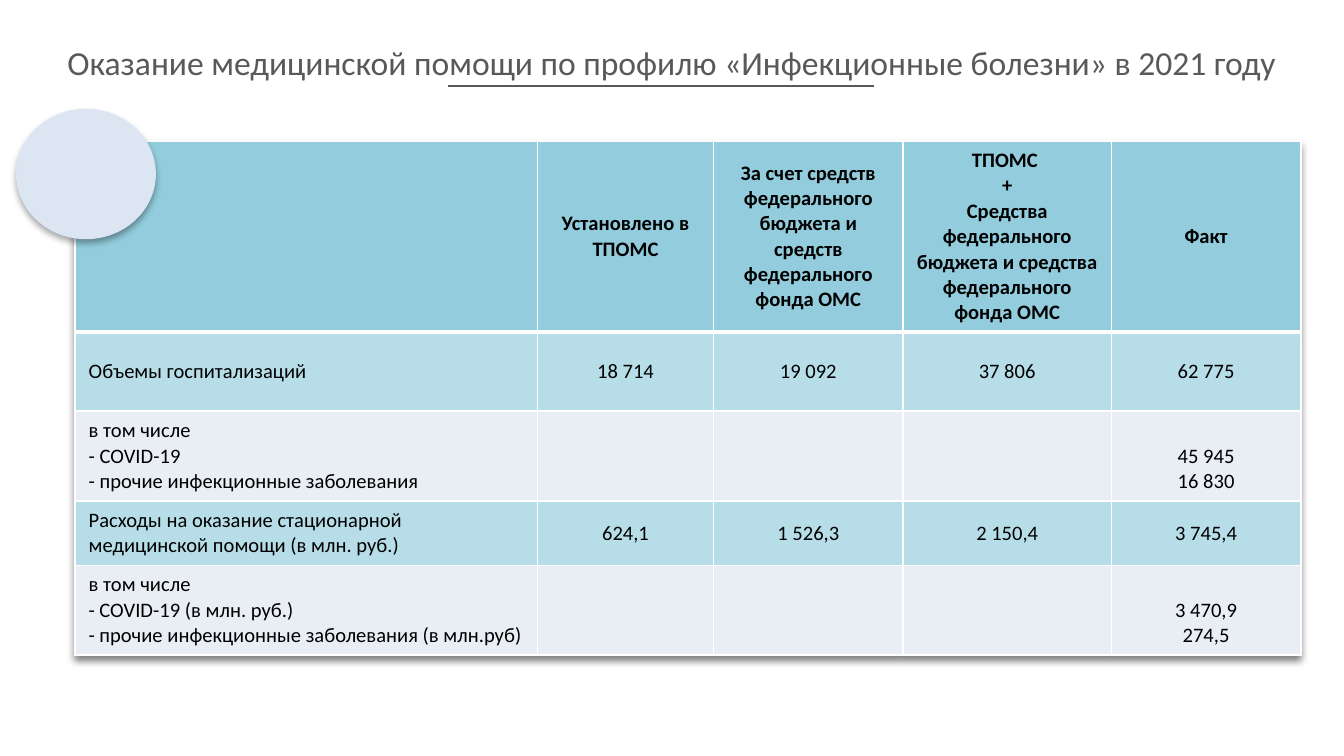
from dataclasses import dataclass

from lxml import etree
from pptx import Presentation
from pptx.dml.color import RGBColor
from pptx.enum.shapes import MSO_CONNECTOR, MSO_SHAPE
from pptx.enum.text import MSO_ANCHOR, PP_ALIGN
from pptx.oxml.ns import qn
from pptx.util import Inches, Pt

LINE = MSO_CONNECTOR.STRAIGHT
OVAL = MSO_SHAPE.OVAL
MIDDLE = MSO_ANCHOR.MIDDLE
BOTTOM = MSO_ANCHOR.BOTTOM
LEFT = PP_ALIGN.LEFT
CENTER = PP_ALIGN.CENTER

FONT = "Calibri"
BLACK = RGBColor(0x00, 0x00, 0x00)
WHITE = RGBColor(0xFF, 0xFF, 0xFF)
GREY = RGBColor(0x59, 0x59, 0x59)
TEAL = RGBColor(0x93, 0xCD, 0xDD)
AQUA = RGBColor(0xB7, 0xDE, 0xE8)
PALE = RGBColor(0xE9, 0xED, 0xF4)
CLOUD = RGBColor(0xDC, 0xE6, 0xF2)

WIDE = 10
WIDTHS = (3.44, 1.31, 1.41, 1.55, 1.41)


@dataclass(frozen=True)
class Row:
    height: float
    fill: RGBColor
    texts: tuple[str, ...]
    bold: bool = False
    top: int = 1
    base: int = 1
    dashes: bool = False
    anchor: MSO_ANCHOR = MIDDLE


ROWS = (
    Row(1.41, TEAL, (
        "",
        "Установлено в ТПОМС",
        "За счет средств федерального бюджета и средств федерального фонда ОМС",
        "ТПОМС \n+\nСредства федерального бюджета и средства федерального фонда ОМС",
        "Факт",
    ), bold=True, base=3),
    Row(0.59, AQUA, ("Объемы госпитализаций", "18 714", "19 092", "37 806", "62 775"), top=3),
    Row(0.66, PALE, (
        "в том числе\n- COVID-19\n- прочие инфекционные заболевания",
        "", "", "", "45 945\n16 830",
    ), anchor=BOTTOM),
    Row(0.48, AQUA, (
        "Расходы на оказание стационарной медицинской помощи (в млн. руб.)",
        "624,1", "1 526,3", "2 150,4", "3 745,4",
    )),
    Row(0.66, PALE, (
        "в том числе\nCOVID-19 (в млн. руб.)\nпрочие инфекционные заболевания (в млн.руб)",
        "", "", "", "3 470,9\n274,5",
    ), dashes=True, anchor=BOTTOM),
)


def style(para, size: float, color: RGBColor, bold: bool = False) -> None:
    for run in para.runs:
        font = run.font
        font.name = FONT
        font.size = Pt(size)
        font.bold = bold
        font.color.rgb = color


def shade(props, alpha: int, blur: float, dist: float) -> None:
    for old in props.findall(qn("a:effectLst")):
        props.remove(old)
    effect = etree.Element(qn("a:effectLst"))
    shadow = etree.SubElement(
        effect, qn("a:outerShdw"), blurRad=str(Pt(blur)), dist=str(Pt(dist)),
        dir="5400000", algn="t", rotWithShape="0",
    )
    color = etree.SubElement(shadow, qn("a:srgbClr"), val=str(BLACK))
    etree.SubElement(color, qn("a:alpha"), val=str(alpha * 1000))
    style_id = props.find(qn("a:tableStyleId"))
    if style_id is None:
        props.append(effect)
    else:
        style_id.addprevious(effect)


def border(cell, row: Row) -> None:
    props = cell._tc.get_or_add_tcPr()
    sides = (("L", 1), ("R", 1), ("T", row.top), ("B", row.base))
    for spot, (side, width) in enumerate(sides):
        line = etree.Element(qn(f"a:ln{side}"), w=str(Pt(width)))
        fill = etree.SubElement(line, qn("a:solidFill"))
        etree.SubElement(fill, qn("a:srgbClr"), val=str(WHITE))
        props.insert(spot, line)


def dash(para) -> None:
    props = para._p.get_or_add_pPr()
    props.set("marL", str(Inches(0.08)))
    props.set("indent", str(-Inches(0.08)))
    etree.SubElement(props, qn("a:buFont"), typeface=FONT)
    etree.SubElement(props, qn("a:buChar"), char="-")


def fill_cell(cell, row: Row, col: int) -> None:
    cell.fill.solid()
    cell.fill.fore_color.rgb = row.fill
    cell.vertical_anchor = row.anchor
    border(cell, row)
    if not row.texts[col]:
        return
    cell.text_frame.text = row.texts[col]
    for spot, para in enumerate(cell.text_frame.paragraphs):
        para.alignment = CENTER if col else LEFT
        if row.dashes and not col and spot:
            dash(para)
        style(para, 11, BLACK, row.bold)


def add_title(slide) -> None:
    title = slide.shapes.title
    title.left, title.top = Inches(0.16), Inches(0.14)
    title.width, title.height = Inches(9.68), Inches(0.64)
    frame = title.text_frame
    frame.text = "Оказание медицинской помощи по профилю «Инфекционные болезни» в 2021 году"
    frame.word_wrap = True
    frame.vertical_anchor = MIDDLE
    frame.paragraphs[0].alignment = CENTER
    style(frame.paragraphs[0], 18, GREY)


def add_rule(slide) -> None:
    rule = slide.shapes.add_connector(
        LINE, Inches(3.33), Inches(0.64), Inches(6.5), Inches(0.64))
    rule.line.color.rgb = GREY
    rule.line.width = Pt(1)
    etree.SubElement(rule._element.spPr, qn("a:effectLst"))


def add_grid(slide) -> None:
    height = sum(row.height for row in ROWS)
    table = slide.shapes.add_table(
        len(ROWS), len(WIDTHS), Inches(0.56), Inches(1.05),
        Inches(sum(WIDTHS)), Inches(height)).table
    for col, width in zip(table.columns, WIDTHS):
        col.width = Inches(width)
    for spot, row in enumerate(ROWS):
        table.rows[spot].height = Inches(row.height)
        for col in range(len(WIDTHS)):
            fill_cell(table.cell(spot, col), row, col)
    shade(table._tbl.tblPr, 50, 4, 3)


def add_disc(slide) -> None:
    disc = slide.shapes.add_shape(
        OVAL, Inches(0.12), Inches(0.81), Inches(1.04), Inches(0.97))
    disc.shadow.inherit = False
    disc.fill.solid()
    disc.fill.fore_color.rgb = CLOUD
    disc.line.fill.background()
    shade(disc._element.spPr, 32, 3.5, 2.2)


def main() -> None:
    deck = Presentation()
    deck.slide_width, deck.slide_height = Inches(WIDE), Inches(WIDE * 9 / 16)
    slide = deck.slides.add_slide(deck.slide_layouts[5])
    add_title(slide)
    add_rule(slide)
    add_grid(slide)
    add_disc(slide)
    deck.save("out.pptx")


if __name__ == "__main__":
    main()
